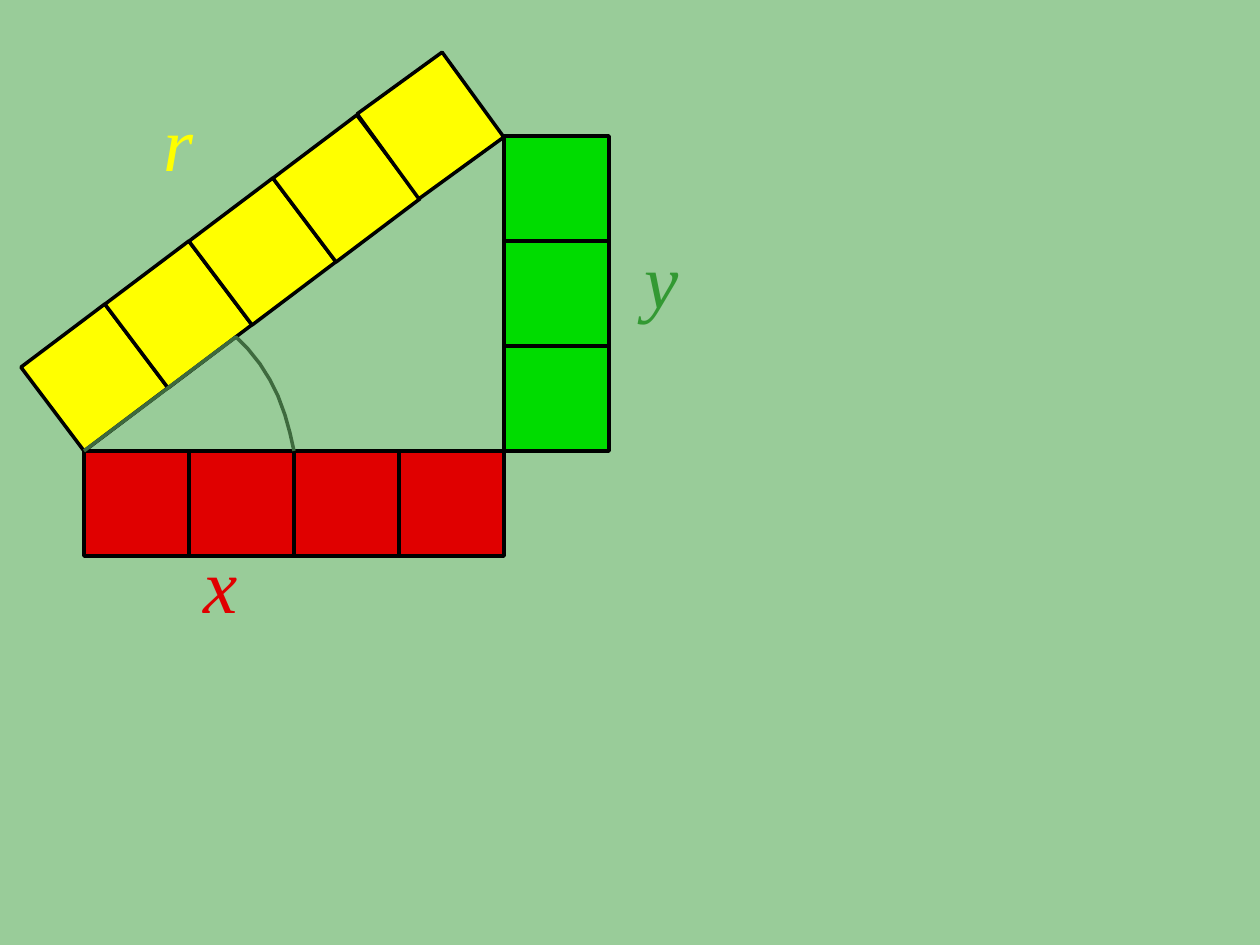
"""Build a slide showing a 3-4-5 triangle made of unit squares."""
import lxml.etree
import pptx
import pptx.dml.color
import pptx.enum.shapes
import pptx.enum.text
import pptx.oxml.ns
import pptx.util

SCALE = 914400 / 126
UNIT = 105
ORIGIN = (84, 451)
COLORS = {
    "background": "99CC99",
    "red": "E00000",
    "green": "00DC00",
    "yellow": "FFFF00",
    "label_green": "339933",
    "outline": "000000",
    "arc": "3E6A3E",
    "shadow": "3E6A3E",
}
LABEL_FORMAT = {"name": "Times New Roman", "size": pptx.util.Pt(44), "italic": True}
FRAME_FORMAT = {
    "word_wrap": False,
    "vertical_anchor": pptx.enum.text.MSO_ANCHOR.MIDDLE,
}


def px(value):
    """Turn pixels into EMU."""
    return pptx.util.Emu(round(value * SCALE))


def rgb(name):
    """Return the named colour."""
    return pptx.dml.color.RGBColor.from_string(COLORS[name])


def set_line(shape, color):
    """Give a shape a plain two-point line without shadow."""
    shape.shadow.inherit = False
    shape.line.color.rgb = rgb(color)
    shape.line.width = pptx.util.Pt(2)


def add_square(slide, left, top, color, rotation=0):
    """Add one unit square."""
    shape = slide.shapes.add_shape(
        pptx.enum.shapes.MSO_SHAPE.RECTANGLE, px(left), px(top), px(UNIT), px(UNIT)
    )
    shape.rotation = rotation
    shape.fill.solid()
    shape.fill.fore_color.rgb = rgb(color)
    set_line(shape, "outline")


def add_text_shadow(run):
    """Give a run a soft offset shadow after its colour."""
    namespace = pptx.oxml.ns.nsdecls("a")
    effects = lxml.etree.fromstring(
        f'<a:effectLst {namespace}><a:outerShdw dist="38100" dir="2700000">'
        f'<a:srgbClr val="{COLORS["shadow"]}"><a:alpha val="50000"/></a:srgbClr>'
        "</a:outerShdw></a:effectLst>"
    )
    fill = run.font._element.find(pptx.oxml.ns.qn("a:solidFill"))
    fill.addnext(effects)


def add_label(slide, text, left, top, color):
    """Add the italic name of one side."""
    frame = slide.shapes.add_textbox(px(left), px(top), px(63), px(94)).text_frame
    for name, value in FRAME_FORMAT.items():
        setattr(frame, name, value)
    paragraph = frame.paragraphs[0]
    paragraph.alignment = pptx.enum.text.PP_ALIGN.CENTER
    run = paragraph.add_run()
    run.text = text
    for name, value in LABEL_FORMAT.items():
        setattr(run.font, name, value)
    run.font.color.rgb = rgb(color)
    add_text_shadow(run)


def add_angle(slide, points):
    """Add the open outline of the angle at the origin."""
    builder = slide.shapes.build_freeform(*ORIGIN, scale=SCALE)
    builder.add_line_segments(points, close=False)
    shape = builder.convert_to_shape()
    shape.fill.background()
    set_line(shape, "arc")


def main():
    """Build and save the slide."""
    presentation = pptx.Presentation()
    presentation.slide_width = px(1260)
    presentation.slide_height = px(945)
    slide = presentation.slides.add_slide(presentation.slide_layouts[6])
    slide.background.fill.solid()
    slide.background.fill.fore_color.rgb = rgb("background")

    left, base = ORIGIN
    for index in range(4):
        add_square(slide, left + index * UNIT, base, "red")
    for index in range(3):
        add_square(slide, left + 4 * UNIT, base - (index + 1) * UNIT, "green")
    for index, rotation in enumerate((323, 323, 323, 323, 324)):
        add_square(slide, 42 + index * 84, 325 - index * 63, "yellow", rotation)

    add_angle(slide, [(236, 337), (248, 349), (260, 364), (270, 380),
                      (278, 396), (285, 415), (290, 433), (294, 451)])
    add_label(slide, "x", 189, 536, "red")
    add_label(slide, "r", 147, 94, "yellow")
    add_label(slide, "y", 630, 231, "label_green")
    presentation.save("out.pptx")


if __name__ == "__main__":
    main()
